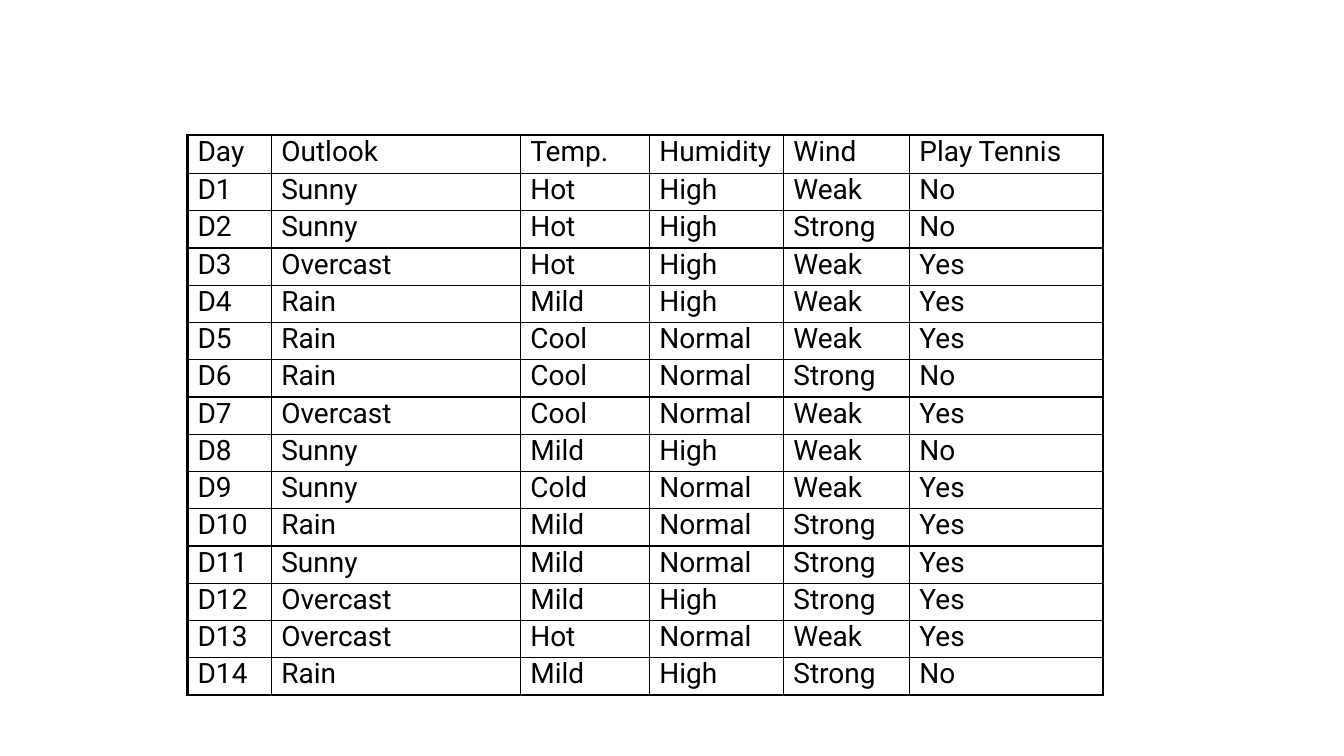
"""Build a slide with the play-tennis training examples in a bordered table."""
from lxml.etree import SubElement
from pptx import Presentation
from pptx.dml.color import RGBColor
from pptx.oxml.ns import qn
from pptx.util import Inches, Pt

BLACK = RGBColor(0x00, 0x00, 0x00)
FONT = "Roboto"
THIN, THICK = 1, 2.25
COL_WIDTHS = [0.83, 2.47, 1.28, 1.33, 1.25, 1.92]
HEADER_H, ROW_H = 0.38, 0.37

HEADER = ["Day", "Outlook", "Temp.", "Humidity", "Wind", "Play Tennis"]
EXAMPLES = [
    ["Sunny", "Hot", "High", "Weak", "No"],
    ["Sunny", "Hot", "High", "Strong", "No"],
    ["Overcast", "Hot", "High", "Weak", "Yes"],
    ["Rain", "Mild", "High", "Weak", "Yes"],
    ["Rain", "Cool", "Normal", "Weak", "Yes"],
    ["Rain", "Cool", "Normal", "Strong", "No"],
    ["Overcast", "Cool", "Normal", "Weak", "Yes"],
    ["Sunny", "Mild", "High", "Weak", "No"],
    ["Sunny", "Cold", "Normal", "Weak", "Yes"],
    ["Rain", "Mild", "Normal", "Strong", "Yes"],
    ["Sunny", "Mild", "Normal", "Strong", "Yes"],
    ["Overcast", "Mild", "High", "Strong", "Yes"],
    ["Overcast", "Hot", "Normal", "Weak", "Yes"],
    ["Rain", "Mild", "High", "Strong", "No"],
]
rows = [HEADER] + [[f"D{day}"] + ex for day, ex in enumerate(EXAMPLES, 1)]


def add_border(cell, side, width):
    ln = SubElement(cell._tc.get_or_add_tcPr(), qn(f"a:ln{side}"), w=str(Pt(width)))
    fill = SubElement(ln, qn("a:solidFill"))
    SubElement(fill, qn("a:srgbClr"), val=str(BLACK))


def add_text(cell, text):
    p = cell.text_frame.paragraphs[0]
    p.line_spacing = 0.8
    before = SubElement(p._p.get_or_add_pPr(), qn("a:spcBef"))
    SubElement(before, qn("a:spcPct"), val="20000")
    r = p.add_run()
    r.text = text
    r.font.name = FONT
    r.font.size = Pt(20)
    r.font.color.rgb = BLACK


prs = Presentation()
prs.slide_width, prs.slide_height = Inches(13.33), Inches(7.5)
s = prs.slides.add_slide(prs.slide_layouts[6])

height = HEADER_H + ROW_H * len(EXAMPLES)
frame = s.shapes.add_table(len(rows), len(HEADER), Inches(1.86), Inches(1.34),
                           Inches(sum(COL_WIDTHS)), Inches(height))
table = frame.table
table.first_row = False
table.horz_banding = False
for col, width in zip(table.columns, COL_WIDTHS):
    col.width = Inches(width)

last_row, last_col = len(rows) - 1, len(HEADER) - 1
for i, values in enumerate(rows):
    table.rows[i].height = Inches(ROW_H if i else HEADER_H)
    for j, text in enumerate(values):
        cell = table.cell(i, j)
        cell.margin_left = cell.margin_right = Inches(0.1)
        cell.margin_top = cell.margin_bottom = Inches(0.05)
        add_text(cell, text)
        outer = {"L": j == 0, "R": j == last_col, "T": i == 0, "B": i == last_row}
        for side, is_outer in outer.items():
            add_border(cell, side, THICK if is_outer else THIN)
        cell.fill.background()

prs.save("out.pptx")
